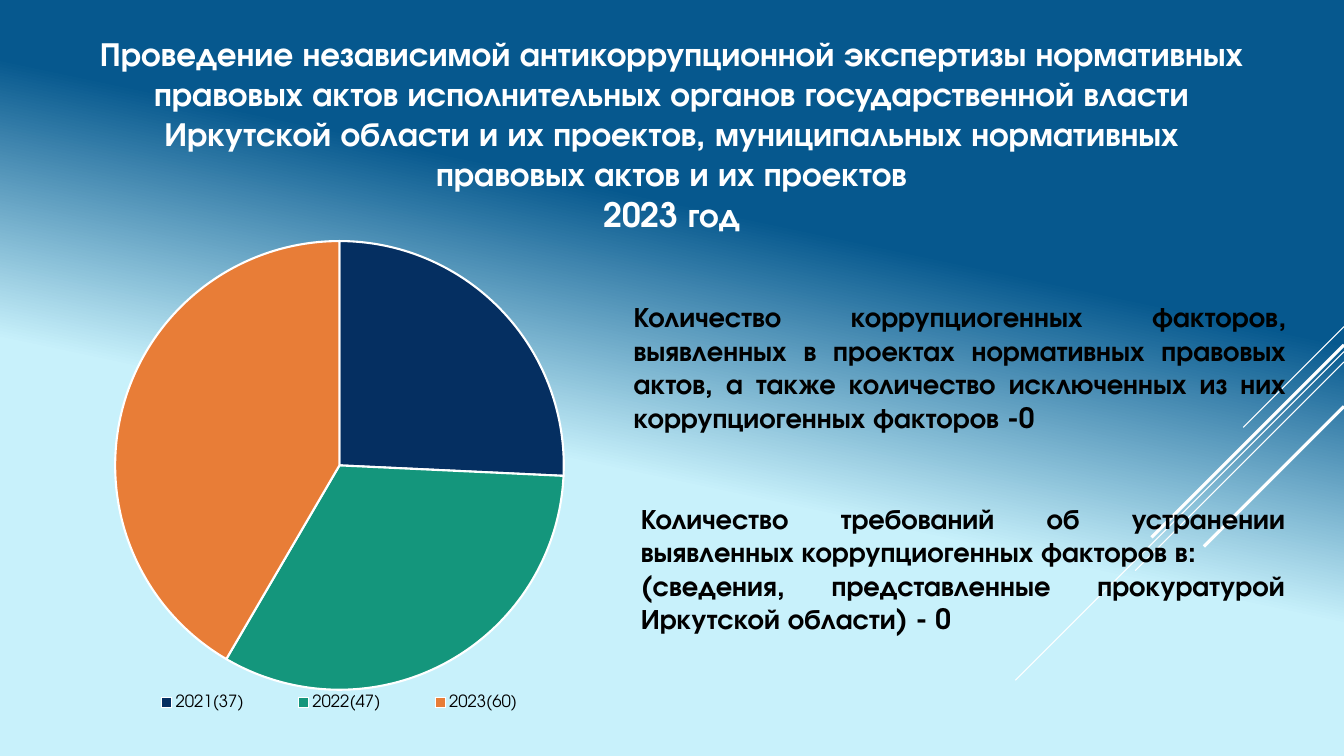
from lxml import etree
from pptx import Presentation
from pptx import util as u
from pptx.chart.data import CategoryChartData
from pptx.dml.color import RGBColor
from pptx.enum import chart as ch, shapes, text
from pptx.oxml import parse_xml
from pptx.oxml.ns import nsdecls, qn

Cm, Pt = u.Cm, u.Pt
FONT = "TeX Gyre Adventor"
COLORS = {
    "deep": "06588E", "pale": "C8F1FB", "white": "FFFFFF", "black": "000000",
    "2021": "052F61", "2022": "14967C", "2023": "E87D37",
}
WIDTH, HEIGHT = Cm(33.87), Cm(19.05)


def rgb(name):
    return RGBColor.from_string(COLORS[name])


def style_font(font, size, color, bold=False):
    font.name, font.size, font.bold = FONT, Pt(size), bold
    font.color.rgb = rgb(color)


def fill_text(sp, paragraphs, size, color, align):
    tf = sp.text_frame
    tf.word_wrap = True
    tf.auto_size = text.MSO_AUTO_SIZE.NONE
    tf.vertical_anchor = text.MSO_ANCHOR.TOP
    tf.text = "\n".join(paragraphs)
    for p in tf.paragraphs:
        p.alignment = align
        style_font(p.font, size, color, bold=True)


def paint_background(s):
    fill = s.background.fill
    fill.gradient()
    fill.gradient_angle = 258
    stops = ((0.33, "deep"), (0.6, "pale"))
    for stop, (position, color) in zip(fill.gradient_stops, stops):
        stop.position = position
        stop.color.rgb = rgb(color)


def add_rays(s, right):
    """Diagonal rays at 45 degrees, starting from the right edge."""
    rays = ((8.23, 2.54, 0.75), (8.86, 8.28, 0.75), (9.12, 5.26, 0.75),
            (8.69, 4.85, 2.25), (10.24, 3.53, 2.25))
    for top, reach, width in rays:
        ray = s.shapes.add_connector(
            shapes.MSO_CONNECTOR.STRAIGHT,
            right, Cm(top), right - Cm(reach), Cm(top + reach))
        ray.line.color.rgb = rgb("white")
        ray.line.width = Pt(width)
        etree.SubElement(ray._element.spPr, qn("a:effectLst"))


def add_title(s, left, top, width, height, paragraphs):
    title = s.shapes.title
    title.left, title.top, title.width, title.height = left, top, width, height
    fill_text(title, paragraphs, 24, "white", text.PP_ALIGN.CENTER)


def add_note(s, left, top, width, height, paragraphs):
    note = s.shapes.add_textbox(left, top, width, height)
    fill_text(note, paragraphs, 20, "black", text.PP_ALIGN.JUSTIFY)


def manual_layout(x, y, w, h, inner=False):
    target = '<c:layoutTarget val="inner"/>' if inner else ""
    return parse_xml(
        f'<c:layout {nsdecls("c")}><c:manualLayout>{target}'
        '<c:xMode val="edge"/><c:yMode val="edge"/>'
        f'<c:x val="{x}"/><c:y val="{y}"/><c:w val="{w}"/><c:h val="{h}"/>'
        '</c:manualLayout></c:layout>')


def add_pie(s, left, top, width, height):
    data = CategoryChartData()
    data.categories = ["2021(37)", "2022(47)", "2023(60)"]
    data.add_series("Series 1", (26, 33, 42))
    chart = s.shapes.add_chart(
        ch.XL_CHART_TYPE.PIE, left, top, width, height, data).chart
    chart.has_title = False
    style_font(chart.font, 10, "white")

    # Sectors
    plot = chart.plots[0]
    plot.vary_by_categories = True
    for i, year in enumerate(("2021", "2022", "2023")):
        sector = plot.series[0].points[i].format
        sector.fill.solid()
        sector.fill.fore_color.rgb = rgb(year)
        sector.line.color.rgb = rgb("white")
        sector.line.width = Pt(1.5)

    # Legend
    chart.has_legend = True
    legend = chart.legend
    legend.position = ch.XL_LEGEND_POSITION.BOTTOM
    legend.include_in_layout = False
    style_font(legend.font, 12, "black")

    # Places of the pie and its legend inside the chart
    root = chart._chartSpace
    for old in root.xpath(".//c:plotArea/c:layout | .//c:legend/c:layout"):
        old.getparent().remove(old)
    root.xpath(".//c:plotArea")[0].insert(
        0, manual_layout(0.13, 0.03, 0.75, 0.88, inner=True))
    root.xpath(".//c:legend/c:overlay")[0].addprevious(
        manual_layout(0.13, 0.9, 0.75, 0.07))


def main():
    prs = Presentation()
    prs.slide_width, prs.slide_height = WIDTH, HEIGHT
    s = prs.slides.add_slide(prs.slide_layouts[5])
    paint_background(s)
    add_rays(s, WIDTH)
    add_title(s, Cm(2.08), Cm(0.69), Cm(29.69), Cm(5.38), [
        "Проведение независимой антикоррупционной экспертизы нормативных "
        "правовых актов исполнительных органов государственной власти "
        "Иркутской области и их проектов, муниципальных нормативных "
        "правовых актов и их проектов",
        "2023 год"])
    add_pie(s, Cm(0.86), Cm(5.69), Cm(15.24), Cm(12.85))
    add_note(s, Cm(15.72), Cm(7.42), Cm(16.94), Cm(4.52), [
        "Количество коррупциогенных факторов, выявленных в проектах "
        "нормативных правовых актов, а также количество исключенных из них "
        "коррупциогенных факторов -0"])
    add_note(s, Cm(15.9), Cm(12.5), Cm(16.74), Cm(3.68), [
        "Количество требований об устранении выявленных коррупциогенных "
        "факторов в:",
        "(сведения, представленные прокуратурой Иркутской области) - 0"])
    prs.save("out.pptx")


if __name__ == "__main__":
    main()
